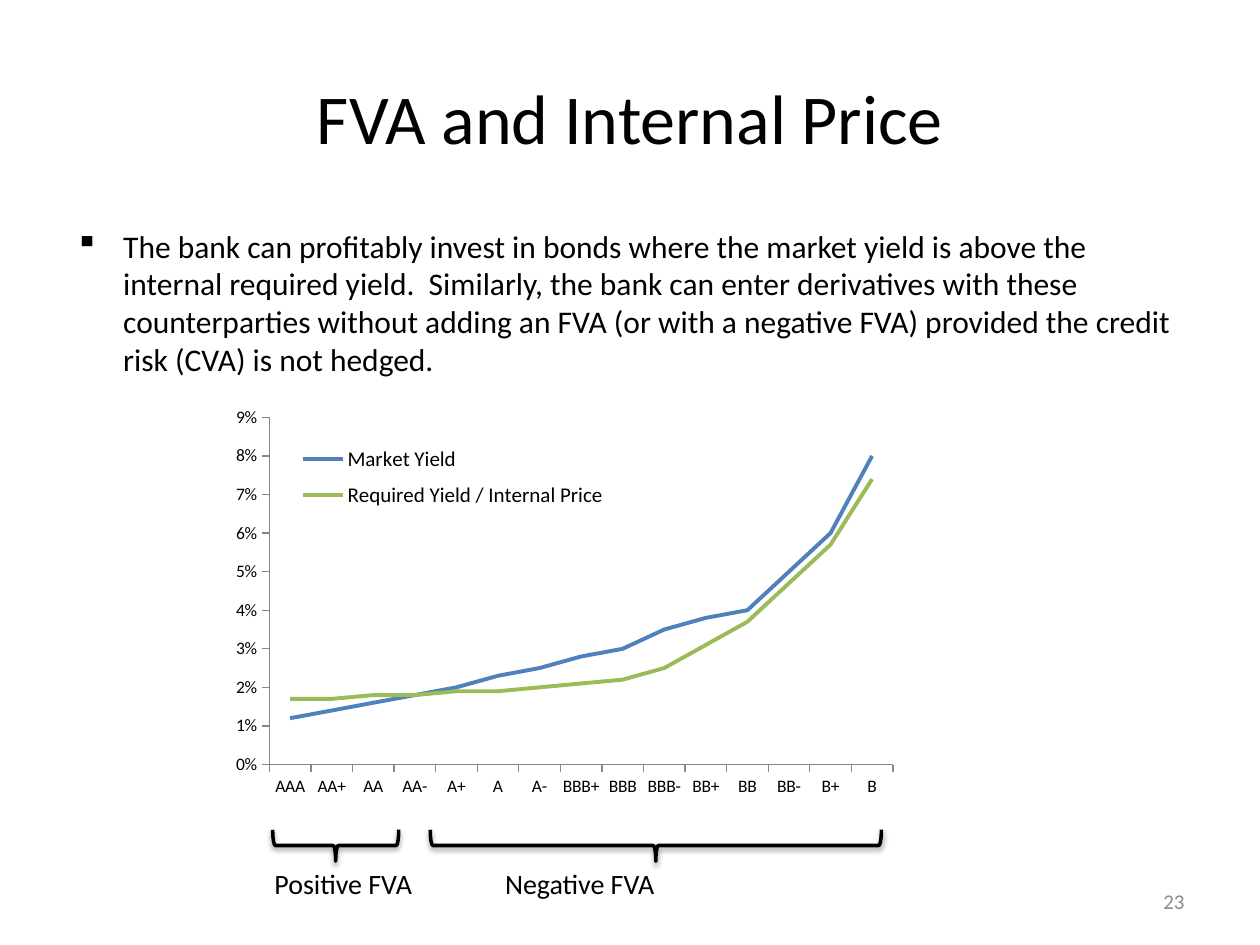
"""Build the slide on FVA and internal price."""
import lxml.etree as et
import pptx
import pptx.chart.data
import pptx.dml.color
import pptx.enum.chart
import pptx.enum.shapes
import pptx.enum.text
import pptx.oxml
import pptx.oxml.ns
import pptx.util

Inches, Pt = pptx.util.Inches, pptx.util.Pt
qn = pptx.oxml.ns.qn
ALIGN = pptx.enum.text.PP_ALIGN
MID = pptx.enum.text.MSO_ANCHOR.MIDDLE
TOP = pptx.enum.text.MSO_ANCHOR.TOP
FONT, BLACK, GREY = "Calibri", "000000", "868686"

TEXTS = {
    "title": ("FVA and Internal Price", (0.5, 0.3, 9, 1.25), 40, BLACK, ALIGN.CENTER, MID),
    "body": ("The bank can profitably invest in bonds where the market yield is above the "
             "internal required yield.  Similarly, the bank can enter derivatives with these "
             "counterparties without adding an FVA (or with a negative FVA) provided the credit "
             "risk (CVA) is not hedged.", (0.5, 1.75, 9, 1), 18, BLACK, ALIGN.LEFT, TOP),
    "number": ("23", (7.17, 6.95, 2.33, 0.4), 12, "8C8C8C", ALIGN.RIGHT, MID),
    "labels": ("Positive FVA\tNegative FVA", (2.08, 6.83, 5.75, 0.5), 16, BLACK, ALIGN.LEFT, TOP),
}
RATES = ["AAA", "AA+", "AA", "AA-", "A+", "A", "A-", "BBB+", "BBB", "BBB-",
         "BB+", "BB", "BB-", "B+", "B"]
YIELDS = [
    ("Market Yield", "4F81BD",
     [0.012, 0.014, 0.016, 0.018, 0.02, 0.023, 0.025, 0.028, 0.03, 0.035,
      0.038, 0.04, 0.05, 0.06, 0.08]),
    ("Required Yield / Internal Price", "9BBB59",
     [0.017, 0.017, 0.018, 0.018, 0.019, 0.019, 0.02, 0.021, 0.022, 0.025,
      0.031, 0.037, 0.047, 0.057, 0.074]),
]
BRACES = [(2.54, 6.21, 0.25, 1), (5.08, 4.92, 0.25, 3.58)]


def color(code):
    return pptx.dml.color.RGBColor.from_string(code)


def style(font, size, code=BLACK):
    font.name, font.size = FONT, Pt(size)
    font.color.rgb = color(code)


def add_text(slide, text, box, size, code, align, anchor):
    frame = slide.shapes.add_textbox(*map(Inches, box)).text_frame
    frame.word_wrap, frame.vertical_anchor = True, anchor
    para = frame.paragraphs[0]
    para.text, para.alignment = text, align
    for run in para.runs:
        style(run.font, size, code)
    return para


def add_bullet(para, mark):
    props = para._p.get_or_add_pPr()
    props.set("marL", str(Inches(0.38)))
    props.set("indent", str(-Inches(0.38)))
    et.SubElement(props, qn("a:buChar"), char=mark)


def add_tab(para, pos):
    tabs = et.SubElement(para._p.get_or_add_pPr(), qn("a:tabLst"))
    et.SubElement(tabs, qn("a:tab"), pos=str(Inches(pos)), algn="l")


def place(part, index, inner, *spots):
    for old in part.findall(qn("c:layout")):
        part.remove(old)
    layout = et.Element(qn("c:layout"))
    part.insert(index, layout)
    manual = et.SubElement(layout, qn("c:manualLayout"))
    pairs = [("layoutTarget", "inner")] if inner else []
    pairs += [("xMode", "edge"), ("yMode", "edge"), *zip("xywh", spots)]
    for tag, val in pairs:
        et.SubElement(manual, qn("c:" + tag), val=str(val))


def add_chart(slide):
    enum = pptx.enum.chart
    data = pptx.chart.data.CategoryChartData(number_format="0%")
    data.categories = RATES
    for name, _, vals in YIELDS:
        data.add_series(name, vals)
    box = map(Inches, (1.67, 3.17, 5.5, 3.25))
    chart = slide.shapes.add_chart(enum.XL_CHART_TYPE.LINE, *box, data).chart
    style(chart.font, 10)
    chart.has_title = False
    plot = chart.plots[0]
    plot.vary_by_categories = False
    for line, (_, code, _) in zip(plot.series, YIELDS):
        line.smooth = False
        line.format.line.color.rgb = color(code)
        line.format.line.width = Pt(2.25)
        line.marker.style = enum.XL_MARKER_STYLE.NONE
    for axis in (chart.category_axis, chart.value_axis):
        axis.has_major_gridlines = False
        axis.major_tick_mark = enum.XL_TICK_MARK.OUTSIDE
        axis.format.line.color.rgb = color(GREY)
    axis = chart.value_axis
    axis.minimum_scale, axis.maximum_scale, axis.major_unit = 0, 0.09, 0.01
    axis.tick_labels.number_format = "0%"
    axis.tick_labels.number_format_is_linked = False
    chart.has_legend = True
    legend = chart.legend
    legend.position = enum.XL_LEGEND_POSITION.RIGHT
    legend.include_in_layout = False
    style(legend.font, 12)
    place(legend._element, 1, False, 0.11, 0.09, 0.48, 0.2)
    place(chart._chartSpace.chart.plotArea, 0, True, 0.085, 0.044, 0.9, 0.848)


def add_brace(slide, box):
    kind = pptx.enum.shapes.MSO_SHAPE.LEFT_BRACE
    brace = slide.shapes.add_shape(kind, *map(Inches, box))
    brace.rotation = 270
    brace.fill.background()
    brace.line.color.rgb = color(BLACK)
    brace.line.width = Pt(2)
    brace.shadow.inherit = False
    effects = brace._element.spPr.find(qn("a:effectLst"))
    shade = et.SubElement(effects, qn("a:outerShdw"), blurRad=str(Pt(3.1)),
                          dist=str(Pt(1.6)), dir="5400000", rotWithShape="0")
    tint = et.SubElement(shade, qn("a:srgbClr"), val=BLACK)
    et.SubElement(tint, qn("a:alpha"), val="38000")


def main():
    deck = pptx.Presentation()
    deck.slide_width, deck.slide_height = Inches(10), Inches(7.5)
    slide = deck.slides.add_slide(deck.slide_layouts[6])
    add_chart(slide)
    for box in BRACES:
        add_brace(slide, box)
    paras = {name: add_text(slide, *spec) for name, spec in TEXTS.items()}
    paras["body"].space_before = Pt(3.6)
    paras["labels"].space_before = Pt(3.2)
    add_bullet(paras["body"], "▪")
    add_tab(paras["labels"], 1.83)
    deck.save("out.pptx")


if __name__ == "__main__":
    main()
